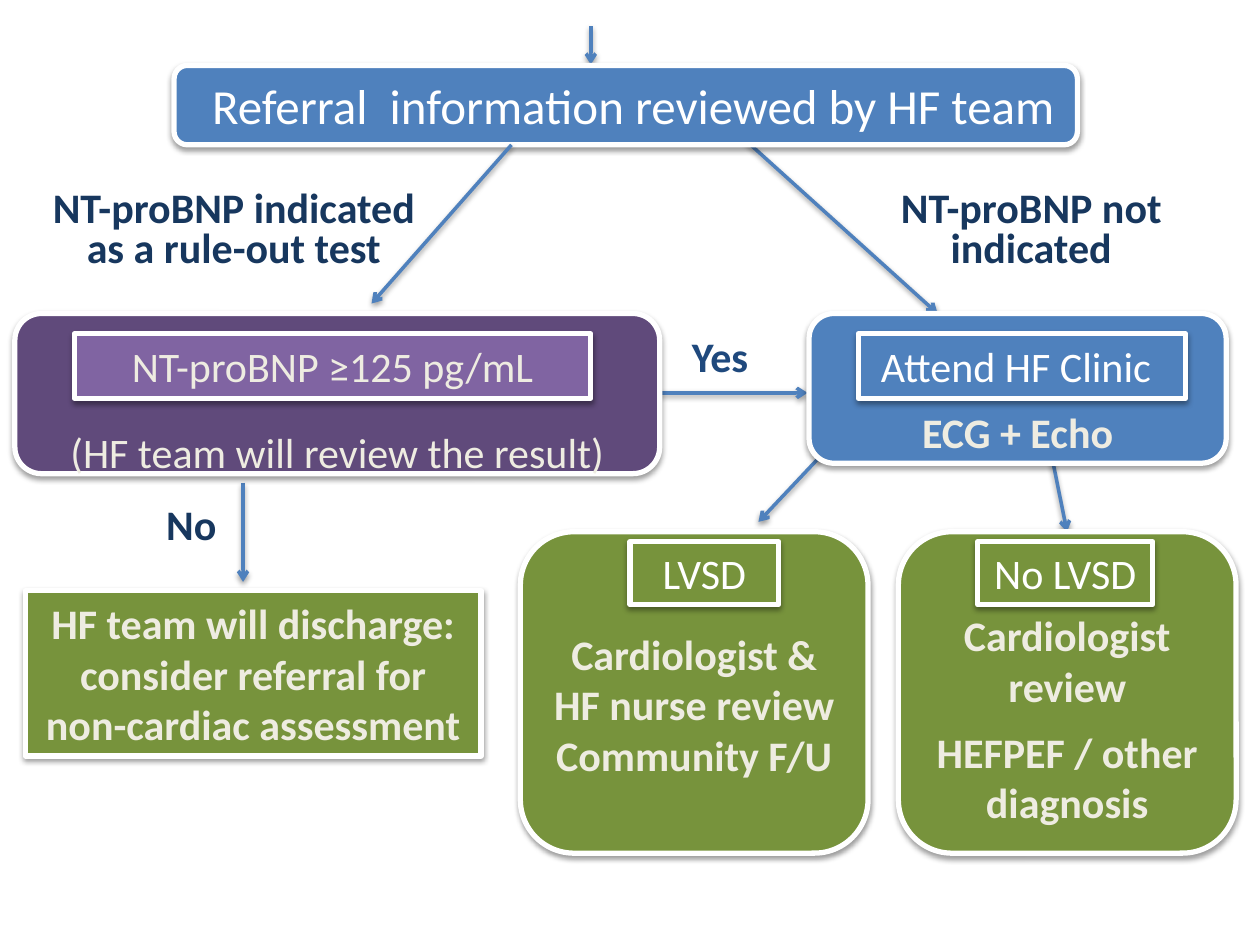
from dataclasses import dataclass

from lxml import etree
from pptx import Presentation
from pptx import util as u
from pptx.dml.color import RGBColor
from pptx.enum import shapes, text
from pptx.oxml.ns import qn

ROUND = shapes.MSO_SHAPE.ROUNDED_RECTANGLE
RECT = shapes.MSO_SHAPE.RECTANGLE
CENTER = text.PP_ALIGN.CENTER
LEFT = text.PP_ALIGN.LEFT


@dataclass(frozen=True)
class Theme:
    font: str = "Calibri"
    blue: str = "4F81BD"
    dark_purple: str = "604A7B"
    purple: str = "8064A2"
    green: str = "77933C"
    white: str = "FFFFFF"
    cream: str = "EEECE1"
    navy: str = "17375E"
    mid_blue: str = "1F497D"
    body: int = 24
    title: int = 28
    border: float = 3
    arrow: float = 2


THEME = Theme()


@dataclass(frozen=True)
class Card:
    left: float
    top: float
    width: float
    height: float
    fill: str
    lines: tuple[str, ...]
    shape: int = RECT
    color: str = THEME.white
    bold: bool = False
    size: int = THEME.body
    align: int = CENTER
    inset_left: float = 0.25
    inset_top: float | None = None
    gap: float = 0


@dataclass(frozen=True)
class Label:
    left: float
    top: float
    width: float
    height: float
    words: str
    color: str = THEME.navy
    align: int = CENTER
    wrap: bool = True
    spacing: float = 0.8


@dataclass(frozen=True)
class Arrow:
    start: tuple[float, float]
    tip: tuple[float, float]


ARROWS = (
    Arrow((21.11, 8.74), (21.51, 10.72)),
    Arrow((16.97, 8.74), (15.29, 10.52)),
    Arrow((4.9, 9.73), (4.9, 11.73)),
    Arrow((10.9, 7.92), (16.28, 7.92)),
    Arrow((14.91, 2.72), (18.9, 6.32)),
    Arrow((11.91, 0.53), (11.91, 1.3)),
)
RULE_OUT_ARROW = Arrow((10.31, 2.92), (7.49, 6.12))

CARDS = (
    Card(3.51, 1.32, 18.21, 1.6, THEME.blue, ("Referral  information reviewed by HF team",),
         ROUND, size=THEME.title, inset_left=0.55),
    Card(0.3, 6.32, 13, 3.23, THEME.dark_purple, ("(HF team will review the result)",),
         ROUND, THEME.cream, inset_top=2.13),
    Card(1.5, 6.73, 10.41, 1.3, THEME.purple, ("NT-proBNP ≥125 pg/mL",), color=THEME.cream),
    Card(16.31, 6.32, 8.41, 3.02, THEME.blue, ("ECG + Echo",),
         ROUND, THEME.cream, True, inset_top=1.72),
    Card(17.3, 6.73, 6.6, 1.3, THEME.blue, ("Attend HF Clinic",), align=LEFT, inset_left=0.46),
    Card(0.51, 11.91, 9.19, 3.33, THEME.green,
         ("HF team will discharge: consider referral for non-cardiac assessment",),
         color=THEME.cream, bold=True),
    Card(10.49, 10.72, 7.01, 6.48, THEME.green,
         ("Cardiologist &", "HF nurse review Community F/U"),
         ROUND, THEME.cream, True, inset_top=1.63),
    Card(12.7, 10.92, 3, 1.27, THEME.green, ("LVSD",)),
    Card(18.11, 10.72, 6.81, 6.48, THEME.green,
         ("Cardiologist review", "HEFPEF / other diagnosis"),
         ROUND, THEME.cream, True, inset_top=1.26, gap=9),
    Card(19.71, 10.92, 3.53, 1.27, THEME.green, ("No LVSD",)),
)

LABELS = (
    Label(13.69, 6.53, 1.65, 1.27, "Yes", THEME.mid_blue, wrap=False, spacing=1),
    Label(0.69, 3.73, 8.05, 1.9, "NT-proBNP indicated as a rule-out test"),
    Label(16.69, 3.73, 8.2, 1.9, "NT-proBNP not indicated"),
    Label(3.1, 10.13, 3.05, 1.09, "No", align=LEFT),
)


def rgb(value: str) -> RGBColor:
    return RGBColor.from_string(value)


def add_shadow(properties) -> None:
    effects = etree.SubElement(properties, qn("a:effectLst"))
    shadow = etree.SubElement(effects, qn("a:outerShdw"), blurRad="40000", dist="20000",
                              dir="5400000", rotWithShape="0")
    color = etree.SubElement(shadow, qn("a:srgbClr"), val="000000")
    etree.SubElement(color, qn("a:alpha"), val="38000")


def style_paragraph(paragraph, color: str, size: int, bold: bool, align: int) -> None:
    paragraph.alignment = align
    font = paragraph.font
    font.name = THEME.font
    font.size = u.Pt(size)
    font.bold = bold
    font.color.rgb = rgb(color)


def draw_arrow(slide, arrow: Arrow) -> None:
    line = slide.shapes.add_connector(
        shapes.MSO_CONNECTOR.STRAIGHT, *(u.Cm(value) for value in arrow.start + arrow.tip))
    line.line.color.rgb = rgb(THEME.blue)
    line.line.width = u.Pt(THEME.arrow)
    etree.SubElement(line.line._get_or_add_ln(), qn("a:tailEnd"), type="arrow")
    add_shadow(line._element.spPr)


def draw_card(slide, card: Card) -> None:
    box = slide.shapes.add_shape(
        card.shape, u.Cm(card.left), u.Cm(card.top), u.Cm(card.width), u.Cm(card.height))
    box.fill.solid()
    box.fill.fore_color.rgb = rgb(card.fill)
    box.line.color.rgb = rgb(THEME.white)
    box.line.width = u.Pt(THEME.border)
    add_shadow(box._element.spPr)
    frame = box.text_frame
    frame.word_wrap = True
    frame.margin_left = u.Cm(card.inset_left)
    frame.vertical_anchor = text.MSO_ANCHOR.MIDDLE
    if card.inset_top is not None:
        frame.vertical_anchor = text.MSO_ANCHOR.TOP
        frame.margin_top = u.Cm(card.inset_top)
        frame.margin_bottom = 0
    for index, words in enumerate(card.lines):
        paragraph = frame.add_paragraph() if index else frame.paragraphs[0]
        paragraph.text = words
        paragraph.space_before = u.Pt(card.gap if index else 0)
        style_paragraph(paragraph, card.color, card.size, card.bold, card.align)


def draw_label(slide, label: Label) -> None:
    box = slide.shapes.add_textbox(
        u.Cm(label.left), u.Cm(label.top), u.Cm(label.width), u.Cm(label.height))
    box.text_frame.word_wrap = label.wrap
    paragraph = box.text_frame.paragraphs[0]
    paragraph.text = label.words
    paragraph.line_spacing = label.spacing
    style_paragraph(paragraph, label.color, THEME.body, True, label.align)


def main() -> None:
    deck = Presentation()
    deck.slide_width, deck.slide_height = u.Cm(25.4), u.Cm(19.05)
    slide = deck.slides.add_slide(deck.slide_layouts[6])
    for arrow in ARROWS:
        draw_arrow(slide, arrow)
    for card in CARDS:
        draw_card(slide, card)
    draw_arrow(slide, RULE_OUT_ARROW)
    for label in LABELS:
        draw_label(slide, label)
    deck.save("out.pptx")


if __name__ == "__main__":
    main()
